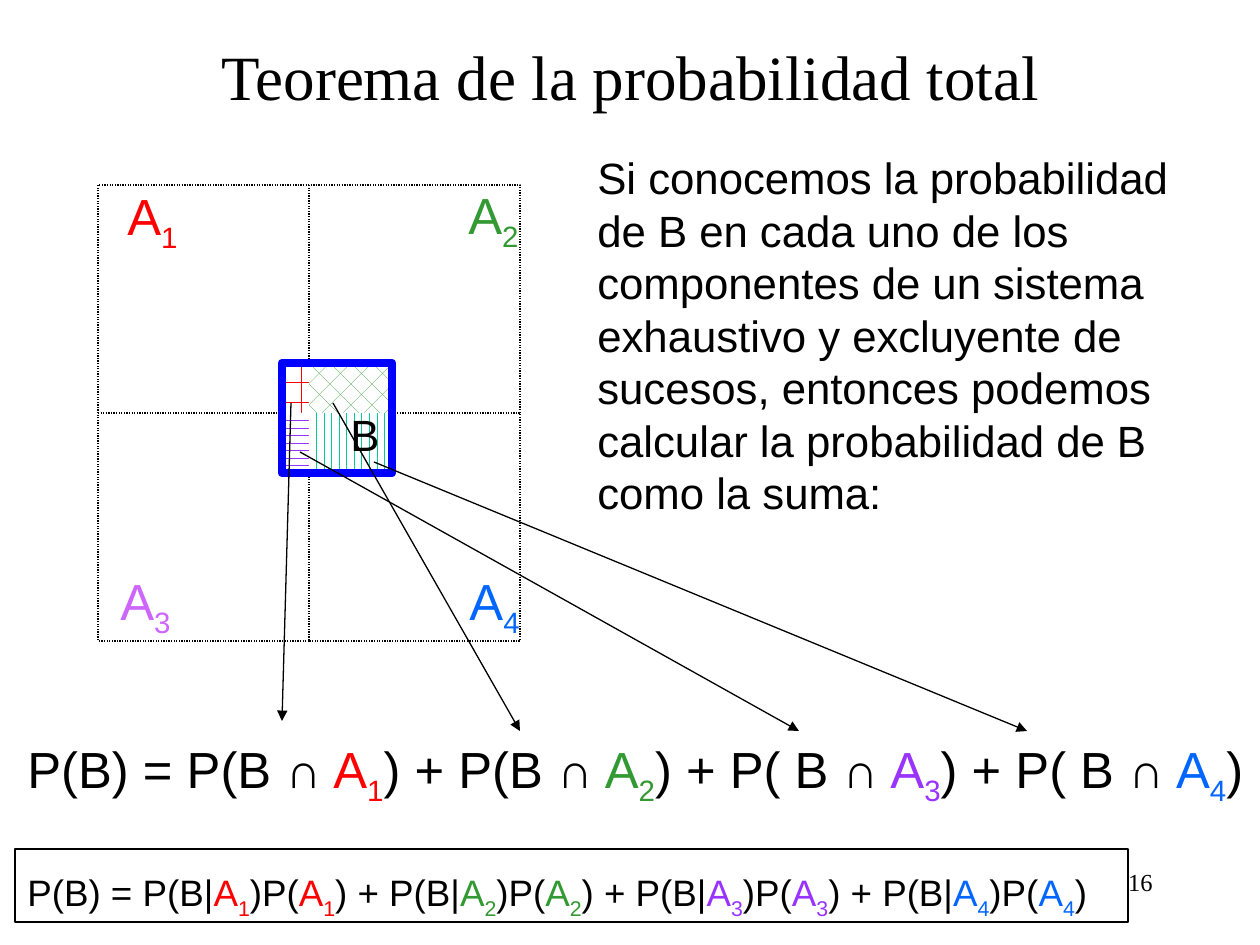
from lxml.etree import SubElement
from pptx import Presentation
from pptx.dml.color import RGBColor
from pptx.enum.dml import MSO_LINE as Dash, MSO_PATTERN as Pattern
from pptx.enum.shapes import MSO_CONNECTOR as Connector, MSO_SHAPE as Shape
from pptx.enum.text import MSO_ANCHOR as Anchor, PP_ALIGN as Align
from pptx.oxml.ns import qn
from pptx.util import Emu, Pt

EMU_PER_PX = 914400 / 126
COLORS = {
    "ink": "000000", "paper": "FFFFFF", "frame": "0000FF",
    "A1": "FF0000", "A2": "339933", "A3": "9933FF", "A4": "0066FF",
    "A3 label": "CC66FF", "A4 patch": "00CC99",
}
SANS, SERIF = "Arial", "Times New Roman"


def px(length):
    return Emu(round(length * EMU_PER_PX))


def color(name):
    return RGBColor.from_string(COLORS[name])


def assign(target, values):
    for name, value in values.items():
        setattr(target, name, value)


class Sketch:
    """Holds the text style and the current slide."""

    def __init__(self, page, font, ink):
        self.page, self.font, self.ink = page, font, ink

    def text(self, at, spans, size, wrap=True, frame=None, paragraph=None):
        """Each span is (text, format); a format may hold color, sub, size, name."""
        box = self.page.shapes.add_textbox(*map(px, at))
        assign(box.text_frame, {"word_wrap": wrap, **(frame or {})})
        para = box.text_frame.paragraphs[0]
        assign(para, paragraph or {})
        for words, style in spans:
            span = para.add_run()
            span.text = words
            assign(span.font, {"name": style.get("name", self.font),
                               "size": Pt(style.get("size", size))})
            span.font.color.rgb = color(style.get("color", self.ink))
            if style.get("sub"):
                span.font._element.set("baseline", "-25000") if hasattr(
                    span.font, "_element") else span._r.get_or_add_rPr().set("baseline", "-25000")

    def stroke(self, line, ink, width, dash=None):
        line.color.rgb = color(ink)
        assign(line, {"width": Pt(width), "dash_style": dash})

    def outline(self, at, ink="ink", width=0.75, dash=None):
        shape = self.page.shapes.add_shape(Shape.RECTANGLE, *map(px, at))
        shape.shadow.inherit = False
        shape.fill.background()
        self.stroke(shape.line, ink, width, dash)

    def patch(self, at, pattern, ink):
        shape = self.page.shapes.add_shape(Shape.RECTANGLE, *map(px, at))
        shape.shadow.inherit = False
        shape.line.fill.background()
        shape.fill.patterned()
        shape.fill.pattern = pattern
        shape.fill.fore_color.rgb = color(ink)
        shape.fill.back_color.rgb = color("paper")

    def line(self, start, end, dash=None, arrow=False):
        link = self.page.shapes.add_connector(
            Connector.STRAIGHT, *map(px, (*start, *end)))
        self.stroke(link.line, "ink", 0.75, dash)
        if arrow:
            SubElement(link.get_or_add_ln(), qn("a:tailEnd"), type="triangle")
        SubElement(link._element.spPr, qn("a:effectLst"))


def event(number, ink=None):
    ink = ink or f"A{number}"
    return [("A", {"color": ink}), (str(number), {"color": ink, "sub": True})]


def intersection_sum():
    spans = [("P(B) = P(B ", {})]
    for number, after in enumerate((") + P(B ", ") + P( B ", ") + P( B ", ")"), 1):
        spans += [("∩ ", {"name": SERIF, "size": 28}), *event(number), (after, {})]
    return spans


def conditional_sum():
    spans = [("P(B) = P(B|", {})]
    for number in range(1, 5):
        after = ") + P(B|" if number < 4 else ")"
        spans += [*event(number), (")P(", {}), *event(number), (after, {})]
    return spans


def main():
    deck = Presentation()
    assign(deck, {"slide_width": px(1260), "slide_height": px(945)})
    page = deck.slides.add_slide(deck.slide_layouts[6])
    sketch = Sketch(page, SANS, "ink")

    # Page number and title
    sketch.text((903, 861, 262, 63), [("16", {"name": SERIF})], 14,
                paragraph={"alignment": Align.RIGHT})
    sketch.text((95, -4, 1071, 158),
                [("Teorema de la probabilidad total", {"name": SERIF})], 36,
                frame={"vertical_anchor": Anchor.MIDDLE},
                paragraph={"alignment": Align.CENTER})

    # Sample space split into four events
    left, top, width, height = space = (98, 185, 422, 456)
    middle_x, middle_y = left + width // 2, top + height // 2
    sketch.outline(space, dash=Dash.ROUND_DOT)
    sketch.line((middle_x, top), (middle_x, top + height), Dash.ROUND_DOT)
    sketch.line((left, middle_y), (left + width, middle_y), Dash.ROUND_DOT)
    labels = ((115, 179), (456, 178), (108, 564), (457, 564))
    for number, corner in enumerate(labels, 1):
        ink = "A3 label" if number == 3 else None
        sketch.text((*corner, 78, 73), event(number, ink), 29, wrap=False)

    # Event B and its part in each event
    b_left, b_top, b_side = 282, 363, 110
    columns = ((b_left, middle_x - b_left), (middle_x, b_left + b_side - middle_x))
    rows = ((b_top, middle_y - b_top), (middle_y, b_top + b_side - middle_y))
    cells = [(x, y, w, h) for y, h in rows for x, w in columns]
    patterns = (
        (Pattern.DOTTED_GRID, "A1"), (Pattern.DIAGONAL_BRICK, "A2"),
        (Pattern.DASHED_HORIZONTAL, "A3"), (Pattern.DASHED_VERTICAL, "A4 patch"),
    )
    for cell, (pattern, ink) in zip(cells, patterns):
        sketch.patch(cell, pattern, ink)
    sketch.outline((b_left, b_top, b_side, b_side), "frame", 5)
    sketch.text((338, 402, 54, 66), [("B", {})], 25, wrap=False)

    # Explanation
    sketch.text((585, 145, 616, 432), [(
        "Si conocemos la probabilidad de B en cada uno de los componentes de un "
        "sistema exhaustivo y excluyente de sucesos, entonces podemos calcular "
        "la probabilidad de B como la suma:", {})], 25,
        paragraph={"line_spacing": Pt(30)})

    # Formulas
    sketch.text((15, 732, 1256, 73), intersection_sum(), 29, wrap=False)
    sketch.text((15, 864, 1112, 56), conditional_sum(), 21)

    # Arrows from each part of B to its term
    arrows = (
        ((291, 403), (282, 721)), ((333, 403), (520, 731)),
        ((300, 452), (799, 731)), ((374, 462), (1027, 731)),
    )
    for start, end in arrows:
        sketch.line(start, end, arrow=True)
    sketch.outline((15, 849, 1113, 73))

    deck.save("out.pptx")


if __name__ == "__main__":
    main()
